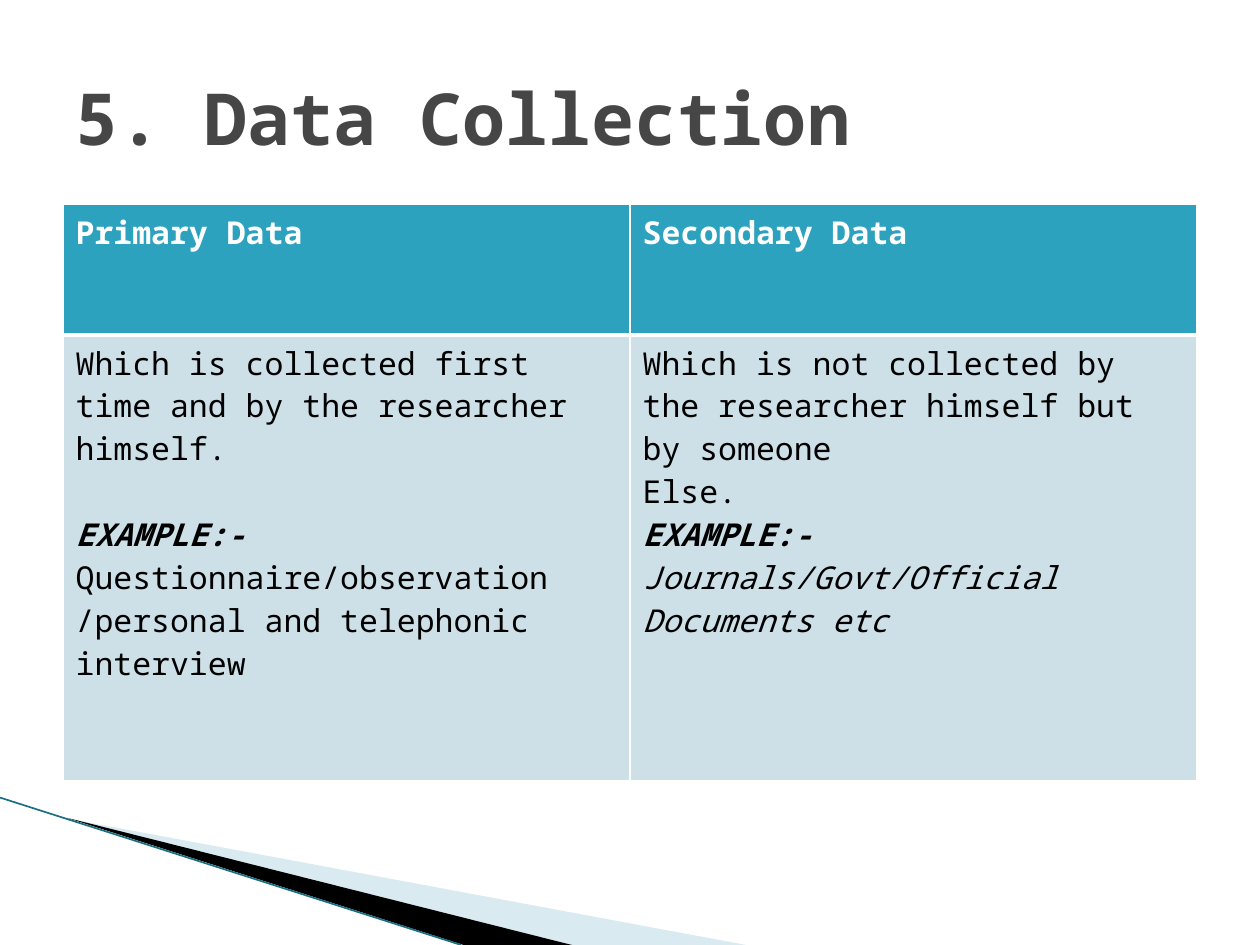
from lxml import etree
from pptx import Presentation
from pptx.dml.color import RGBColor
from pptx.enum import shapes, text
from pptx.oxml import ns
from pptx.util import Inches, Pt

FONT = "Noto Sans Mono"
WHITE, BLACK = "FFFFFF", "000000"
HEADER_FILL, BODY_FILL = "2DA2BF", "CDE0E8"
PLAIN, BOLD, ITALIC, BOLD_ITALIC = (False, False), (True, False), (False, True), (True, True)

HEADERS = ["Primary Data", "Secondary Data"]
DEFINITIONS = [
    [
        ("Which is collected first time and by the researcher himself.", PLAIN, 0),
        ("EXAMPLE:-", BOLD_ITALIC, 24.5),
        ("Questionnaire/observation /personal and telephonic interview", PLAIN, 0),
    ],
    [
        ("Which is not collected by the researcher himself but by someone", PLAIN, 0),
        ("Else.", PLAIN, 0),
        ("EXAMPLE:-", BOLD_ITALIC, 0),
        ("Journals/Govt/Official Documents etc", ITALIC, 0),
    ],
]


def rgb(color):
    return RGBColor.from_string(color)


def add_run(paragraph, content, size, color, style):
    run = paragraph.add_run()
    run.text = content
    run.font.name = FONT
    run.font.size = Pt(size)
    run.font.color.rgb = rgb(color)
    run.font.bold, run.font.italic = style


def add_wedge(slide, points, color, opacity=100):
    corners = [(Inches(x), Inches(y)) for x, y in points]
    builder = slide.shapes.build_freeform(*corners[0])
    builder.add_line_segments(corners[1:], close=True)
    shape = builder.convert_to_shape()
    shape.shadow.inherit = False
    shape.line.fill.background()
    shape.fill.solid()
    shape.fill.fore_color.rgb = rgb(color)
    if opacity < 100:
        fill_color = shape.fill._xPr.find(".//" + ns.qn("a:srgbClr"))
        etree.SubElement(fill_color, ns.qn("a:alpha"), val=str(opacity * 1000))


def add_line(slide, start, end, color, width):
    points = [Inches(value) for value in (*start, *end)]
    line = slide.shapes.add_connector(shapes.MSO_CONNECTOR.STRAIGHT, *points)
    line.line.color.rgb = rgb(color)
    line.line.width = Pt(width)
    etree.SubElement(line._element.spPr, ns.qn("a:effectLst"))


def add_title(slide, content):
    box = slide.shapes.add_textbox(Inches(0.5), Inches(0.3), Inches(9), Inches(1.25))
    frame = box.text_frame
    frame.word_wrap = True
    frame.vertical_anchor = text.MSO_ANCHOR.MIDDLE
    add_run(frame.paragraphs[0], content, 41, "464646", BOLD)


def set_borders(cell, top, bottom):
    properties = cell._tc.get_or_add_tcPr()
    for side, width in (("L", 1), ("R", 1), ("T", top), ("B", bottom)):
        border = etree.SubElement(properties, ns.qn("a:ln" + side), w=str(Pt(width)))
        fill = etree.SubElement(border, ns.qn("a:solidFill"))
        etree.SubElement(fill, ns.qn("a:srgbClr"), val=WHITE)


def fill_cell(cell, lines, fill, color, top, bottom):
    set_borders(cell, top, bottom)
    cell.fill.solid()
    cell.fill.fore_color.rgb = rgb(fill)
    frame = cell.text_frame
    for index, (content, style, gap) in enumerate(lines):
        paragraph = frame.add_paragraph() if index else frame.paragraphs[0]
        if gap:
            paragraph.space_before = Pt(gap)
        add_run(paragraph, content, 18, color, style)


def add_comparison(slide):
    frame = slide.shapes.add_table(2, 2, Inches(0.5), Inches(1.62), Inches(9), Inches(4.58))
    table = frame.table
    for row, height in zip(table.rows, (1.04, 3.54)):
        row.height = Inches(height)
    for column, (header, lines) in enumerate(zip(HEADERS, DEFINITIONS)):
        fill_cell(table.cell(0, column), [(header, BOLD, 0)], HEADER_FILL, WHITE, 1, 3)
        fill_cell(table.cell(1, column), lines, BODY_FILL, BLACK, 3, 1)


def main():
    presentation = Presentation()
    presentation.slide_width, presentation.slide_height = Inches(10), Inches(7.5)
    slide = presentation.slides.add_slide(presentation.slide_layouts[6])
    add_wedge(slide, [(0.55, 6.5), (5.92, 7.5), (4.54, 7.5)], "A0CBDC", 40)
    add_wedge(slide, [(0.53, 6.49), (4.54, 7.5), (3.68, 7.5)], BLACK)
    add_line(slide, (0, 6.33), (3.66, 7.5), "1B6F82", 0.95)
    add_comparison(slide)
    add_title(slide, "5. Data Collection")
    presentation.save("out.pptx")


if __name__ == "__main__":
    main()
